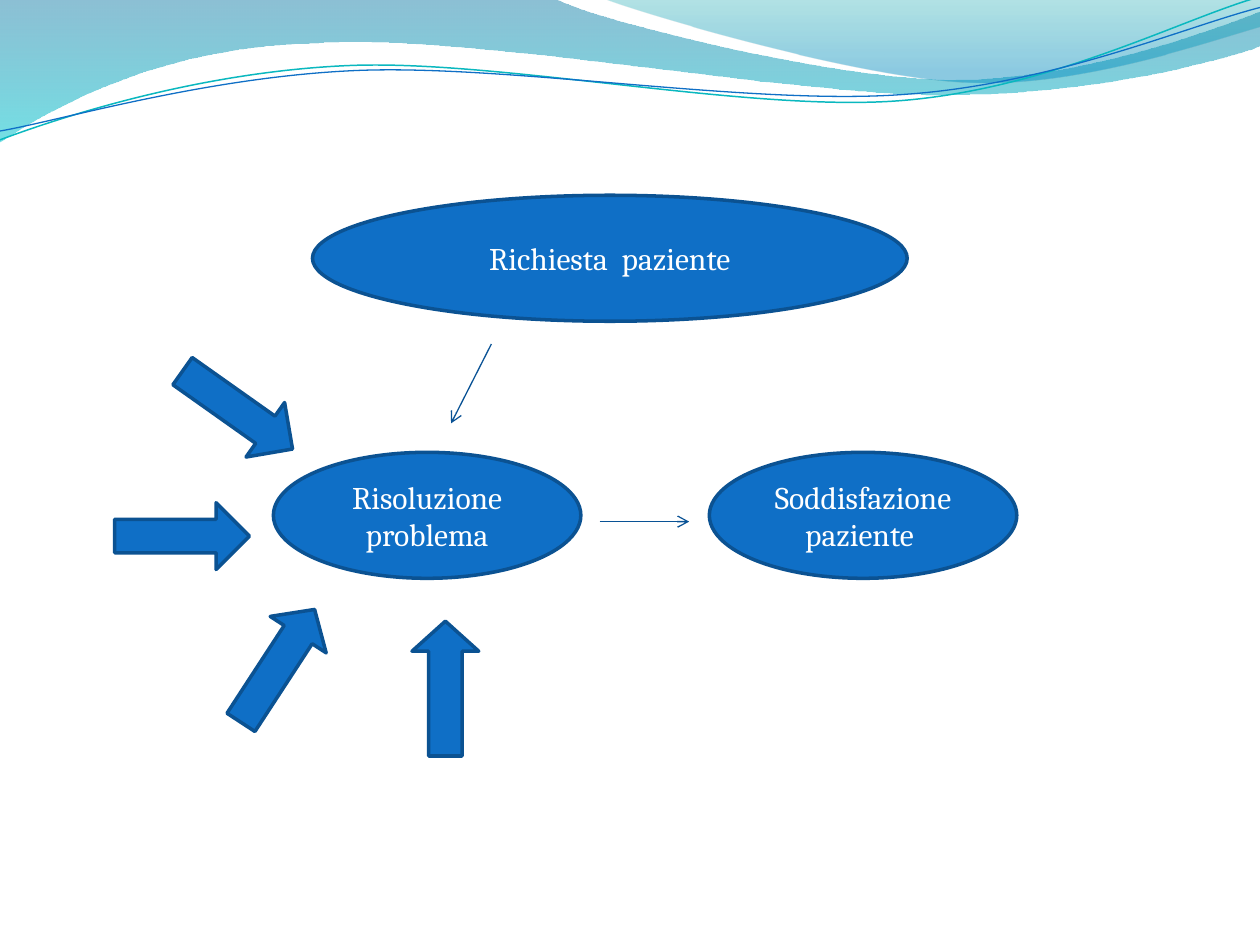
from math import cos, radians, sin

from lxml.etree import SubElement
from pptx import Presentation
from pptx.dml.color import RGBColor
from pptx.enum.shapes import MSO_CONNECTOR, MSO_SHAPE
from pptx.enum.text import MSO_ANCHOR, PP_ALIGN
from pptx.oxml.ns import qn
from pptx.util import Inches, Pt

COLORS = {
    "blue": "0F6FC6", "edge": "0B5292", "link": "095295", "teal": "0AB8BF",
    "sea": "0074A1", "aqua": "00C6CF", "mint": "00A1A9", "sky": "008BBF",
    "white": "FFFFFF",
}
FONT = {"name": "Cambria", "size": Pt(18)}
FRAME = {"word_wrap": True, "vertical_anchor": MSO_ANCHOR.MIDDLE}

# An outline is a list of steps: two numbers end a line, six a Bezier curve.
# A gradient stop is position, color, opacity in percent.
BANDS = [
    ([(0, 0), (4.4, -0.01), (4.76, 0.17, 6.64, 0.63, 7.58, 0.63),
      (8.53, 0.63, 9.58, 0.26, 10, 0.09), (10.01, 0.36),
      (9.83, 0.44, 8.7, 0.76, 7.46, 0.75),
      (6.22, 0.75, 3.82, 0.28, 2.57, 0.34),
      (1.29, 0.36, 0.46, 0.83, -0.01, 1.13), (0, 0)],
     [(0, "sea", 45), (1, "aqua", 55)]),
    ([(4.79, -0.01), (5.09, 0.11, 6.82, 0.62, 7.69, 0.65),
      (8.56, 0.69, 9.61, 0.32, 10, 0.21), (10, 0), (4.79, -0.01)],
     [(0, "mint", 30), (0.8, "sky", 45)]),
]
WAVES = [  # steps, center, color, line width
    ([(0, 1.11), (0.48, 0.93, 1.58, 0.57, 2.77, 0.52),
      (3.95, 0.47, 5.93, 0.89, 7.13, 0.8),
      (8.33, 0.71, 9.38, 0.15, 9.98, -0.02)], (4.99, 0.58), "teal", 0.85),
    ([(0, 1.04), (0.47, 0.96, 1.64, 0.61, 2.83, 0.56),
      (4.03, 0.51, 5.97, 0.84, 7.17, 0.75),
      (8.36, 0.67, 9.41, 0.21, 10, 0.06)], (5, 0.59), "blue", 0.75),
]
TILT = -2.7
OVALS = [
    ("Richiesta  paziente", 2.48, 1.55, 4.72),
    ("Risoluzione problema", 2.17, 3.59, 2.44),
    ("Soddisfazione paziente ", 5.63, 3.59, 2.44),
]
OVAL_H = 1
LINKS = [(3.9, 2.73, 3.58, 3.36), (4.76, 4.14, 5.47, 4.14)]
ARROWS = [  # left, top, turn, head length
    (0.91, 3.99, 0, 0.5), (1.67, 5.02, 303.1, 0.45),
    (3, 5.2, 270, 0.45), (1.35, 2.99, 35.3, 0.5),
]
ARROW_W, ARROW_H = 1.07, 0.53


def color(name):
    return RGBColor.from_string(COLORS[name])


def assign(target, values):
    for key, value in values.items():
        setattr(target, key, value)


def stroke(line, name, width):
    line.color.rgb = color(name)
    line.width = Pt(width)


def pairs(step):
    return list(zip(step[::2], step[1::2]))


def level(steps, center):
    """Turn the steps back by the tilt, around the center."""
    cx, cy = center
    c, s = cos(radians(-TILT)), sin(radians(-TILT))
    return [[v for x, y in pairs(step)
             for v in (cx + (x - cx) * c - (y - cy) * s,
                       cy + (x - cx) * s + (y - cy) * c)]
            for step in steps]


def outline(shapes, steps, close):
    """Draw straight legs, then join each three of a curve into a Bezier."""
    points = [(Inches(x), Inches(y)) for step in steps for x, y in pairs(step)]
    pen = shapes.build_freeform(*points[0])
    pen.add_line_segments(points[1:], close=close)
    shape = pen.convert_to_shape()
    shape.shadow.inherit = False
    legs = iter(list(shape._element.iter(qn("a:lnTo"))))
    for step in steps[1:]:
        leg = next(legs)
        if len(step) == 6:
            curve = SubElement(leg.getparent(), qn("a:cubicBezTo"))
            leg.addprevious(curve)
            for old in (leg, next(legs), next(legs)):
                curve.append(old[0])
                old.getparent().remove(old)
    return shape


def add_band(shapes, steps, stops):
    shape = outline(shapes, steps, True)
    shape.line.fill.background()
    shape.fill.gradient()
    shape.fill.gradient_angle = 270
    for stop, (place, name, alpha) in zip(shape.fill.gradient_stops, stops):
        stop.position = place
        stop.color.rgb = color(name)
    tags = list(shape._element.iter(qn("a:srgbClr")))
    for tag, (place, name, alpha) in zip(tags, stops):
        SubElement(tag, qn("a:alpha"), val=str(alpha * 1000))


def add_wave(shapes, steps, center, name, width):
    shape = outline(shapes, level(steps, center), False)
    shape.rotation = TILT
    shape.fill.background()
    stroke(shape.line, name, width)


def add_solid(shapes, kind, *box):
    shape = shapes.add_shape(kind, *map(Inches, box))
    shape.shadow.inherit = False
    shape.fill.solid()
    shape.fill.fore_color.rgb = color("blue")
    stroke(shape.line, "edge", 2)
    return shape


def add_oval(shapes, text, left, top, width):
    shape = add_solid(shapes, MSO_SHAPE.OVAL, left, top, width, OVAL_H)
    assign(shape.text_frame, FRAME)
    para = shape.text_frame.paragraphs[0]
    para.alignment = PP_ALIGN.CENTER
    run = para.add_run()
    run.text = text
    assign(run.font, FONT)
    run.font.color.rgb = color("white")


def add_link(shapes, *ends):
    link = shapes.add_connector(MSO_CONNECTOR.STRAIGHT, *map(Inches, ends))
    stroke(link.line, "link", 0.75)
    SubElement(link.line._get_or_add_ln(), qn("a:tailEnd"), type="arrow")
    SubElement(link._element.spPr, qn("a:effectLst"))


def add_arrow(shapes, left, top, turn, head):
    shape = add_solid(shapes, MSO_SHAPE.RIGHT_ARROW,
                      left, top, ARROW_W, ARROW_H)
    shape.rotation = turn
    shape.adjustments[1] = head


def main():
    deck = Presentation()
    assign(deck, {"slide_width": Inches(10), "slide_height": Inches(7.5)})
    shapes = deck.slides.add_slide(deck.slide_layouts[6]).shapes
    for draw, items in ((add_band, BANDS), (add_wave, WAVES),
                        (add_oval, OVALS), (add_link, LINKS),
                        (add_arrow, ARROWS)):
        for item in items:
            draw(shapes, *item)
    deck.save("out.pptx")


if __name__ == "__main__":
    main()
